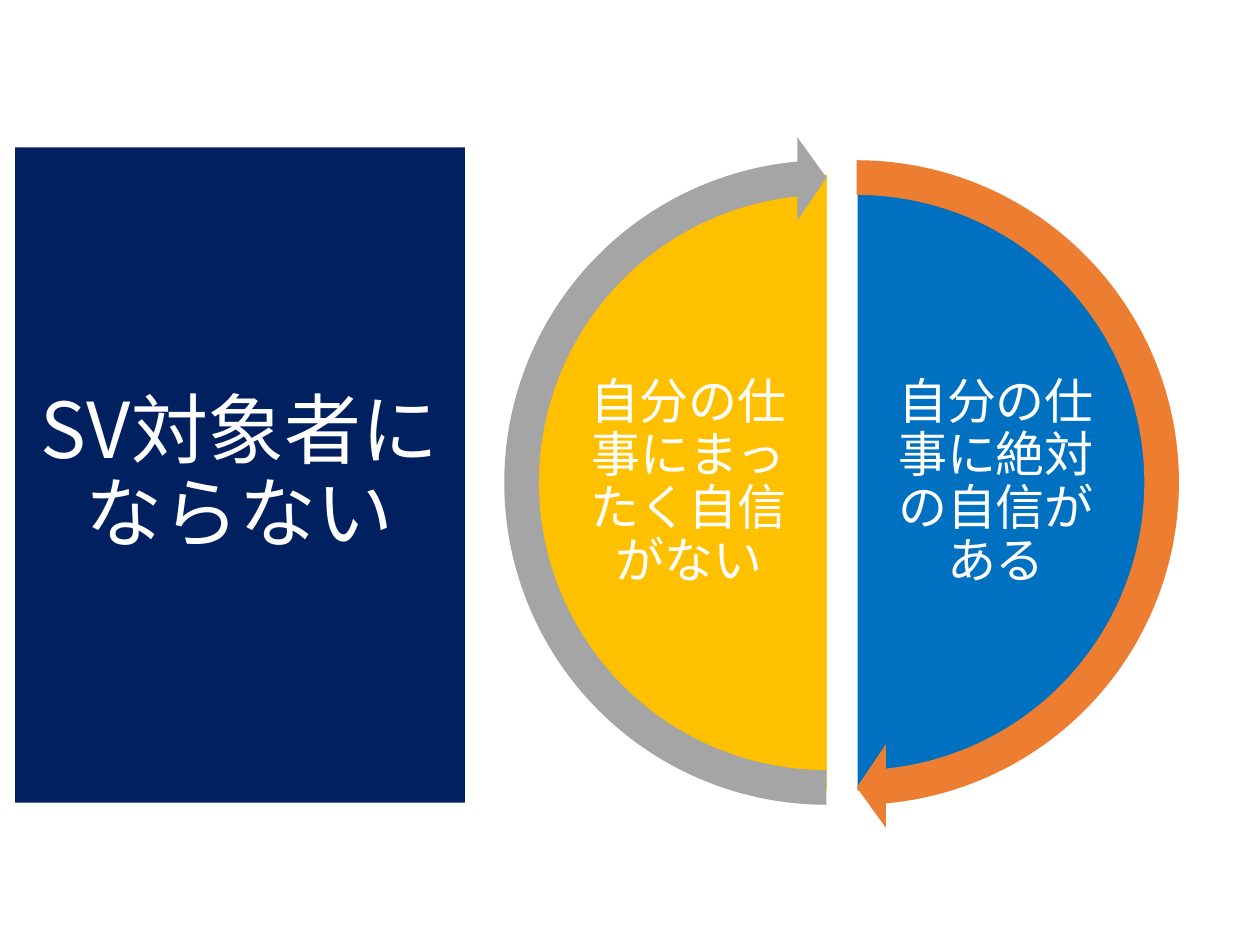
from lxml import etree
from pptx import Presentation
from pptx.dml.color import RGBColor
from pptx.enum.shapes import MSO_SHAPE
from pptx.enum.text import MSO_ANCHOR, MSO_AUTO_SIZE, PP_ALIGN
from pptx.oxml.ns import qn
from pptx.util import Inches, Pt

PIE = MSO_SHAPE.PIE
ARROW = MSO_SHAPE.CIRCULAR_ARROW
MIDDLE = MSO_ANCHOR.MIDDLE
CENTER = PP_ALIGN.CENTER
NO_AUTOFIT = MSO_AUTO_SIZE.NONE

WHITE = RGBColor(0xFF, 0xFF, 0xFF)
NAVY = RGBColor(0x00, 0x20, 0x60)
BLUE = RGBColor(0x00, 0x70, 0xC0)
GOLD = RGBColor(0xFF, 0xC0, 0x00)
ORANGE = RGBColor(0xED, 0x7D, 0x31)
GRAY = RGBColor(0xA5, 0xA5, 0xA5)

TOP, BOTTOM = 162, 54  # ends of a half circle, in units of 100000/60000 degrees
TIP = 3.28  # angle taken up by an arrow's tip, in the same units
PIE_SIZE, ARROW_SIZE = 4.9, 5.5


class SlideBuilder:
    font = "Noto Sans CJK JP"

    def __init__(self, slide):
        self.slide = slide
        self.group = slide.shapes.add_group_shape()

    def set_text(self, tf, text, size):
        tf.word_wrap = True
        tf.auto_size = NO_AUTOFIT
        tf.vertical_anchor = MIDDLE
        tf.text = text
        p = tf.paragraphs[0]
        p.alignment = CENTER
        p.line_spacing = 0.9
        p.font.size = Pt(size)
        p.font.color.rgb = WHITE
        p.font.name = self.font
        # East Asian characters need their own typeface entry
        props = p._p.pPr.find(qn("a:defRPr"))
        etree.SubElement(props, qn("a:ea")).set("typeface", self.font)

    def title(self, text, left, top, width, height):
        sp = self.slide.shapes.title
        sp.left, sp.top = Inches(left), Inches(top)
        sp.width, sp.height = Inches(width), Inches(height)
        sp.fill.solid()
        sp.fill.fore_color.rgb = NAVY
        self.set_text(sp.text_frame, text, 44)

    def shape(self, kind, left, top, size, color, adjustments):
        sp = self.group.shapes.add_shape(
            kind, Inches(left), Inches(top), Inches(size), Inches(size))
        sp.shadow.inherit = False
        sp.fill.solid()
        sp.fill.fore_color.rgb = color
        sp.line.fill.background()
        for i, value in enumerate(adjustments):
            sp.adjustments[i] = value
        return sp

    def half(self, left, color, start, end):
        sp = self.shape(PIE, left, 1.38, PIE_SIZE, color, (start, end))
        sp.line.color.rgb = WHITE
        sp.line.width = Pt(1)

    def label(self, text, left):
        box = self.group.shapes.add_textbox(
            Inches(left), Inches(2.67), Inches(1.75), Inches(2.33))
        tf = box.text_frame
        tf.margin_left = tf.margin_right = Inches(0.04)
        tf.margin_top = tf.margin_bottom = Inches(0.04)
        self.set_text(tf, text, 28)

    def arrow(self, left, color, start, end):
        self.shape(ARROW, left, 1.08, ARROW_SIZE, color,
                   (0.05, TIP, end - TIP, start, 0.06))


def main():
    prs = Presentation()
    prs.slide_width, prs.slide_height = Inches(10), Inches(7.5)
    s = SlideBuilder(prs.slides.add_slide(prs.slide_layouts[5]))

    # Title panel
    s.title("SV対象者に\vならない", 0.12, 1.17, 3.57, 5.2)

    # Two half circles with their labels
    s.half(4.35, BLUE, TOP, BOTTOM)
    s.label("自分の仕事に絶対の自信がある", 7.03)
    s.half(4.12, GOLD, BOTTOM, TOP)
    s.label("自分の仕事にまったく自信がない", 4.59)

    # Arrows around the halves
    s.arrow(4.05, ORANGE, TOP, BOTTOM)
    s.arrow(3.81, GRAY, BOTTOM, TOP)

    prs.save("out.pptx")


if __name__ == "__main__":
    main()
